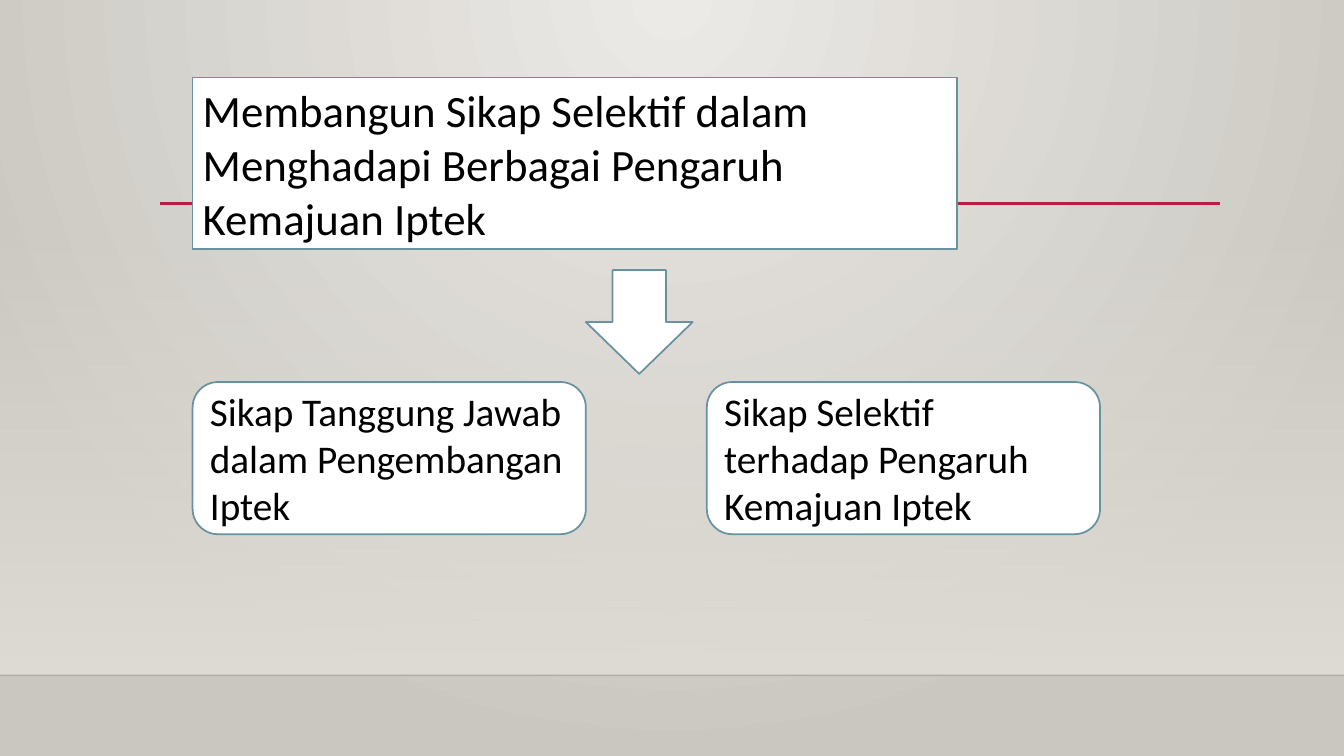
from lxml.etree import SubElement
from pptx import Presentation
from pptx.dml.color import RGBColor
from pptx.enum.shapes import MSO_CONNECTOR as Connector, MSO_SHAPE as Shape
from pptx.enum.text import MSO_ANCHOR as Anchor, MSO_AUTO_SIZE as AutoSize, PP_ALIGN as Align
from pptx.oxml import parse_xml
from pptx.oxml.ns import nsdecls, qn
from pptx.util import Inches, Pt

COLOURS = {
    "glow": "ECEAE7",
    "edge": "CAC7C1",
    "wall": "DFDBD5",
    "floor line": "000001",
    "rule": "B71E42",
    "box": "FFFFFF",
    "outline": "6892A0",
    "text": "000000",
}


def colour(name):
    return RGBColor.from_string(COLOURS[name])


class SlideBuilder:
    font_name = "Calibri"
    outline_width = 1.25

    def __init__(self, presentation):
        self.width = presentation.slide_width
        self.height = presentation.slide_height
        self.slide = presentation.slides.add_slide(presentation.slide_layouts[5])

    def place(self, left, top, width, height):
        return (
            round(self.width * left / 100),
            round(self.height * top / 100),
            round(self.width * width / 100),
            round(self.height * height / 100),
        )

    def gradient(self, fill, element, stops, direction):
        fill.gradient()
        old = element.find(".//" + qn("a:gradFill"))
        stop_xml = "".join(
            f'<a:gs pos="{position * 1000}"><a:srgbClr val="{COLOURS[name]}">'
            f'<a:alpha val="{alpha * 1000}"/></a:srgbClr></a:gs>'
            for position, name, alpha in stops
        )
        new = parse_xml(
            f'<a:gradFill {nsdecls("a")} rotWithShape="1">'
            f"<a:gsLst>{stop_xml}</a:gsLst>{direction}</a:gradFill>"
        )
        old.getparent().replace(old, new)

    def background(self):
        self.gradient(
            self.slide.background.fill,
            self.slide.element,
            [(0, "glow", 100), (100, "edge", 100)],
            '<a:path path="circle"><a:fillToRect l="43000" r="43000" b="100000"/></a:path>',
        )

    def wall(self, *area):
        shape = self.slide.shapes.add_shape(Shape.RECTANGLE, *self.place(*area))
        shape.shadow.inherit = False
        shape.line.fill.background()
        self.gradient(
            shape.fill,
            shape.element,
            [(0, "wall", 0), (100, "wall", 100)],
            '<a:lin ang="5400000" scaled="0"/>',
        )

    def rule(self, start, end, top, name, width, alpha=100):
        left, y, right, _ = self.place(start, top, end, 0)
        line = self.slide.shapes.add_connector(Connector.STRAIGHT, left, y, right, y)
        line.line.color.rgb = colour(name)
        line.line.width = Pt(width)
        SubElement(line.element.spPr, qn("a:effectLst"))
        if alpha < 100:
            tint = line.element.spPr.find(".//" + qn("a:srgbClr"))
            SubElement(tint, qn("a:alpha"), val=str(alpha * 1000))

    def paint(self, shape):
        shape.fill.solid()
        shape.fill.fore_color.rgb = colour("box")
        shape.line.color.rgb = colour("outline")
        shape.line.width = Pt(self.outline_width)

    def set_text(self, shape, text, size):
        frame = shape.text_frame
        frame.text = text
        frame_format = {
            "word_wrap": True,
            "auto_size": AutoSize.NONE,
            "vertical_anchor": Anchor.MIDDLE,
        }
        for name, value in frame_format.items():
            setattr(frame, name, value)
        paragraph = frame.paragraphs[0]
        paragraph.alignment = Align.LEFT
        font = paragraph.runs[0].font
        for name, value in {"name": self.font_name, "size": Pt(size)}.items():
            setattr(font, name, value)
        font.color.rgb = colour("text")

    def title(self, text, *area):
        title = self.slide.shapes.title
        names = ("left", "top", "width", "height")
        for name, value in zip(names, self.place(*area)):
            setattr(title, name, value)
        outline = SubElement(title.element.spPr, qn("a:prstGeom"), prst="roundRect")
        SubElement(outline, qn("a:avLst"))
        self.paint(title)
        self.set_text(title, text, 32)
        title.element.getparent().append(title.element)

    def shape(self, kind, *area):
        shape = self.slide.shapes.add_shape(kind, *self.place(*area))
        shape.shadow.inherit = False
        self.paint(shape)
        return shape

    def box(self, text, *area):
        self.set_text(self.shape(Shape.ROUNDED_RECTANGLE, *area), text, 28)


def main():
    presentation = Presentation()
    presentation.slide_width = Inches(13.33)
    presentation.slide_height = Inches(7.5)
    builder = SlideBuilder(presentation)

    builder.background()
    builder.wall(0, 29.47, 100, 59.87)
    builder.rule(0, 100, 89.33, "floor line", 1, alpha=20)
    builder.rule(11.93, 90.77, 26.93, "rule", 2.5)

    left, box_width, gap = 14.33, 29.26, 9
    builder.title(
        "Membangun Sikap Selektif dalam Menghadapi Berbagai Pengaruh Kemajuan Iptek",
        left, 10.27, 56.86, 22.67,
    )
    attitudes = [
        "Sikap Tanggung Jawab dalam Pengembangan Iptek",
        "Sikap Selektif terhadap Pengaruh Kemajuan Iptek",
    ]
    for column, text in enumerate(attitudes):
        builder.box(text, left + column * (box_width + gap), 50.53, box_width, 20.13)
    builder.shape(Shape.DOWN_ARROW, left + box_width, 35.73, 7.95, 13.73)

    presentation.save("out.pptx")


if __name__ == "__main__":
    main()
